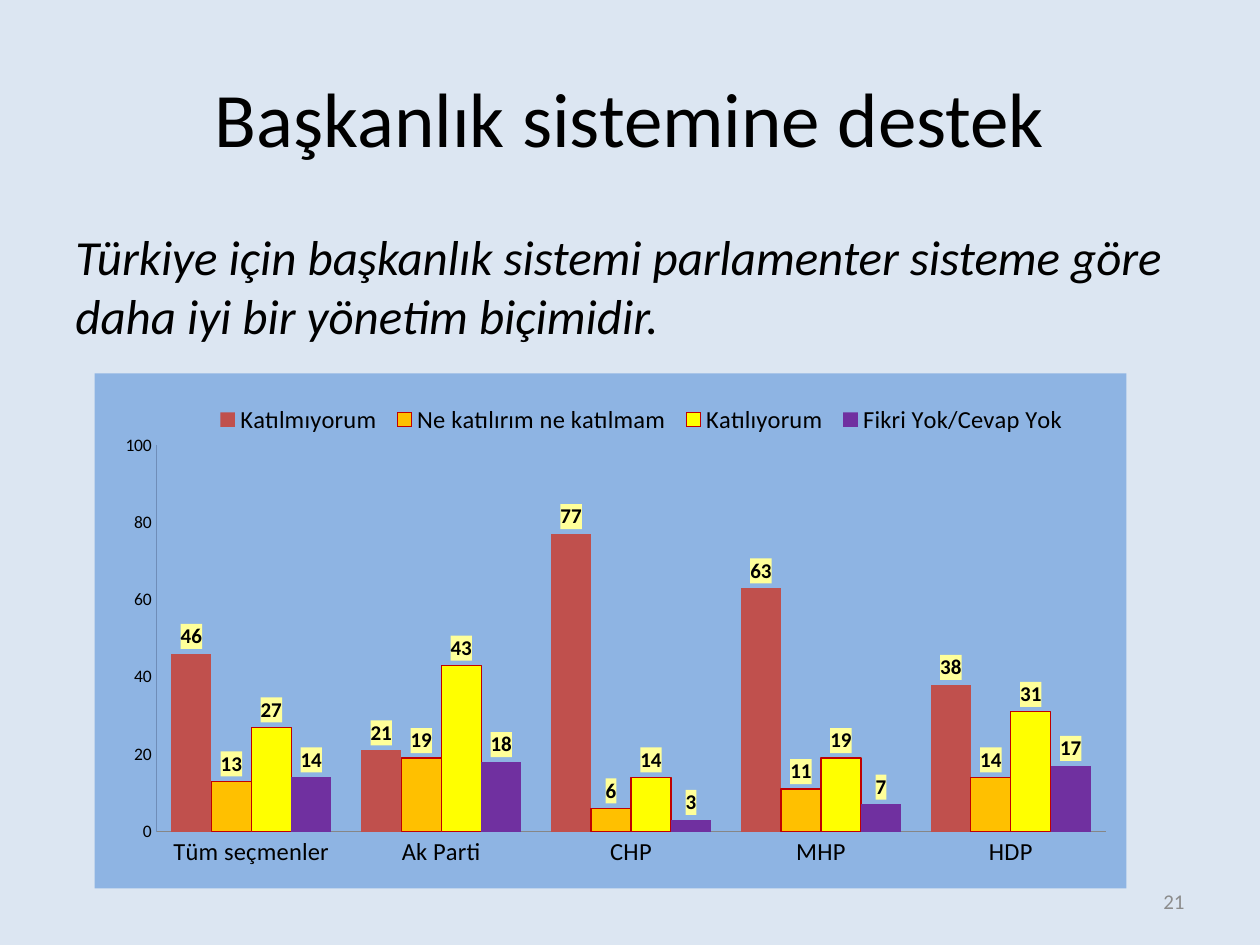
import lxml.etree
import pptx
import pptx.chart.data
import pptx.dml.color
import pptx.enum.chart
import pptx.enum.text
import pptx.oxml
import pptx.oxml.ns
import pptx.util

WIDE, HIGH = 10, 7.5
FONT = "Calibri"
HUES = {
    "back": "DCE6F2", "text": "000000", "page": "8C8C8C", "panel": "8EB4E3",
    "label": "FFFF99", "edge": "C00000", "axis": "868686", "side": "6F8DB8",
}
GROUPS = ["Tüm seçmenler", "Ak Parti", "CHP", "MHP", "HDP"]
SERIES = [
    ("Katılmıyorum", (46, 21, 77, 63, 38), "C0504D", False),
    ("Ne katılırım ne katılmam", (13, 19, 6, 11, 14), "FFC000", True),
    ("Katılıyorum", (27, 43, 14, 19, 31), "FFFF00", True),
    ("Fikri Yok/Cevap Yok", (14, 18, 3, 7, 17), "7030A0", False),
]
SPACE = ('xmlns:c="http://schemas.openxmlformats.org/drawingml/2006/chart" '
         'xmlns:a="http://schemas.openxmlformats.org/drawingml/2006/main"')


def tint(hue):
    return pptx.dml.color.RGBColor.from_string(hue)


def area(left, top, wide, high):
    return [pptx.util.Inches(side * share) for side, share in
            ((WIDE, left), (HIGH, top), (WIDE, wide), (HIGH, high))]


def style(font, size, hue="text", bold=False, slant=False):
    font.name = FONT
    font.size = pptx.util.Pt(size)
    font.bold = bold
    font.italic = slant
    font.color.rgb = tint(HUES[hue])


def write(shape, box, words, size, align, anchor, hue="text", slant=False):
    shape.left, shape.top, shape.width, shape.height = box
    frame = shape.text_frame
    frame.word_wrap = True
    frame.auto_size = pptx.enum.text.MSO_AUTO_SIZE.NONE
    frame.vertical_anchor = anchor
    para = frame.paragraphs[0]
    para.alignment = align
    run = para.add_run()
    run.text = words
    style(run.font, size, hue, slant=slant)
    return para


def panel(hue):
    return pptx.oxml.parse_xml(
        f'<c:spPr {SPACE}><a:solidFill><a:srgbClr val="{hue}"/></a:solidFill>'
        '<a:ln><a:noFill/></a:ln></c:spPr>')


def place(part, spot, left, top, wide, high, inner=False):
    for old in part.findall(pptx.oxml.ns.qn("c:layout")):
        part.remove(old)
    target = '<c:layoutTarget val="inner"/>' if inner else ""
    sizes = "".join(f'<c:{name} val="{share}"/>' for name, share in
                    zip("xywh", (left, top, wide, high)))
    part.insert(spot, pptx.oxml.parse_xml(
        f'<c:layout {SPACE}><c:manualLayout>{target}<c:xMode val="edge"/>'
        f'<c:yMode val="edge"/>{sizes}</c:manualLayout></c:layout>'))


def paint(row, hue, edged):
    row.format.fill.solid()
    row.format.fill.fore_color.rgb = tint(hue)
    row.invert_if_negative = False
    if edged:
        row.format.line.color.rgb = tint(HUES["edge"])
        row.format.line.width = pptx.util.Pt(0.75)
    else:
        row.format.line.fill.background()
    tags = row.data_labels
    tags.show_value = True
    tags.number_format = "0"
    tags.number_format_is_linked = False
    tags.position = pptx.enum.chart.XL_LABEL_POSITION.OUTSIDE_END
    style(tags.font, 12, bold=True)
    node = tags._element
    node.find(pptx.oxml.ns.qn("c:numFmt")).addnext(panel(HUES["label"]))


def trim(axis, size, hue):
    axis.has_major_gridlines = False
    axis.major_tick_mark = pptx.enum.chart.XL_TICK_MARK.NONE
    axis.minor_tick_mark = pptx.enum.chart.XL_TICK_MARK.NONE
    axis.format.line.color.rgb = tint(HUES[hue])
    style(axis.tick_labels.font, size)


def draw(slide, box):
    data = pptx.chart.data.CategoryChartData(number_format="0")
    data.categories = GROUPS
    for name, vals, hue, edged in SERIES:
        data.add_series(name, vals)
    kind = pptx.enum.chart.XL_CHART_TYPE.COLUMN_CLUSTERED
    chart = slide.shapes.add_chart(kind, *box, data).chart
    chart.has_title = False
    style(chart.font, 10)
    plot = chart.plots[0]
    plot.gap_width = 75
    plot.overlap = 0
    plot.vary_by_categories = False
    for row, (name, vals, hue, edged) in zip(plot.series, SERIES):
        paint(row, hue, edged)
    trim(chart.category_axis, 14, "axis")
    scale = chart.value_axis
    trim(scale, 10, "side")
    scale.minimum_scale, scale.maximum_scale, scale.major_unit = 0, 100, 20
    scale.tick_labels.number_format = "0"
    scale.tick_labels.number_format_is_linked = False
    chart.has_legend = True
    key = chart.legend
    key.position = pptx.enum.chart.XL_LEGEND_POSITION.BOTTOM
    key.include_in_layout = False
    style(key.font, 14)
    place(key._element, 1, 0.11, 0.05, 0.84, 0.08)
    root = chart._chartSpace
    root.chart.addnext(panel(HUES["panel"]))
    inner = root.chart.plotArea
    place(inner, 0, 0.06, 0.14, 0.92, 0.75, inner=True)
    inner.append(panel(HUES["panel"]))


def main():
    deck = pptx.Presentation()
    deck.slide_width = pptx.util.Inches(WIDE)
    deck.slide_height = pptx.util.Inches(HIGH)
    slide = deck.slides.add_slide(deck.slide_layouts[5])
    slide.background.fill.solid()
    slide.background.fill.fore_color.rgb = tint(HUES["back"])
    align = pptx.enum.text.PP_ALIGN
    anchor = pptx.enum.text.MSO_ANCHOR
    write(slide.shapes.title, area(0.05, 0.04, 0.9, 0.167),
          "Başkanlık sistemine destek", 44, align.CENTER, anchor.MIDDLE)
    box = area(0.05, 0.233, 0.922, 0.15)
    claim = write(
        slide.shapes.add_textbox(*box), box,
        "Türkiye için başkanlık sistemi parlamenter sisteme göre "
        "daha iyi bir yönetim biçimidir.",
        28, align.LEFT, anchor.TOP, slant=True)
    claim.space_before = pptx.util.Pt(5.6)
    draw(slide, area(0.075, 0.395, 0.819, 0.545))
    box = area(0.717, 0.927, 0.233, 0.053)
    write(slide.shapes.add_textbox(*box), box, "21", 12,
          align.RIGHT, anchor.MIDDLE, "page")
    deck.save("out.pptx")


if __name__ == "__main__":
    main()
